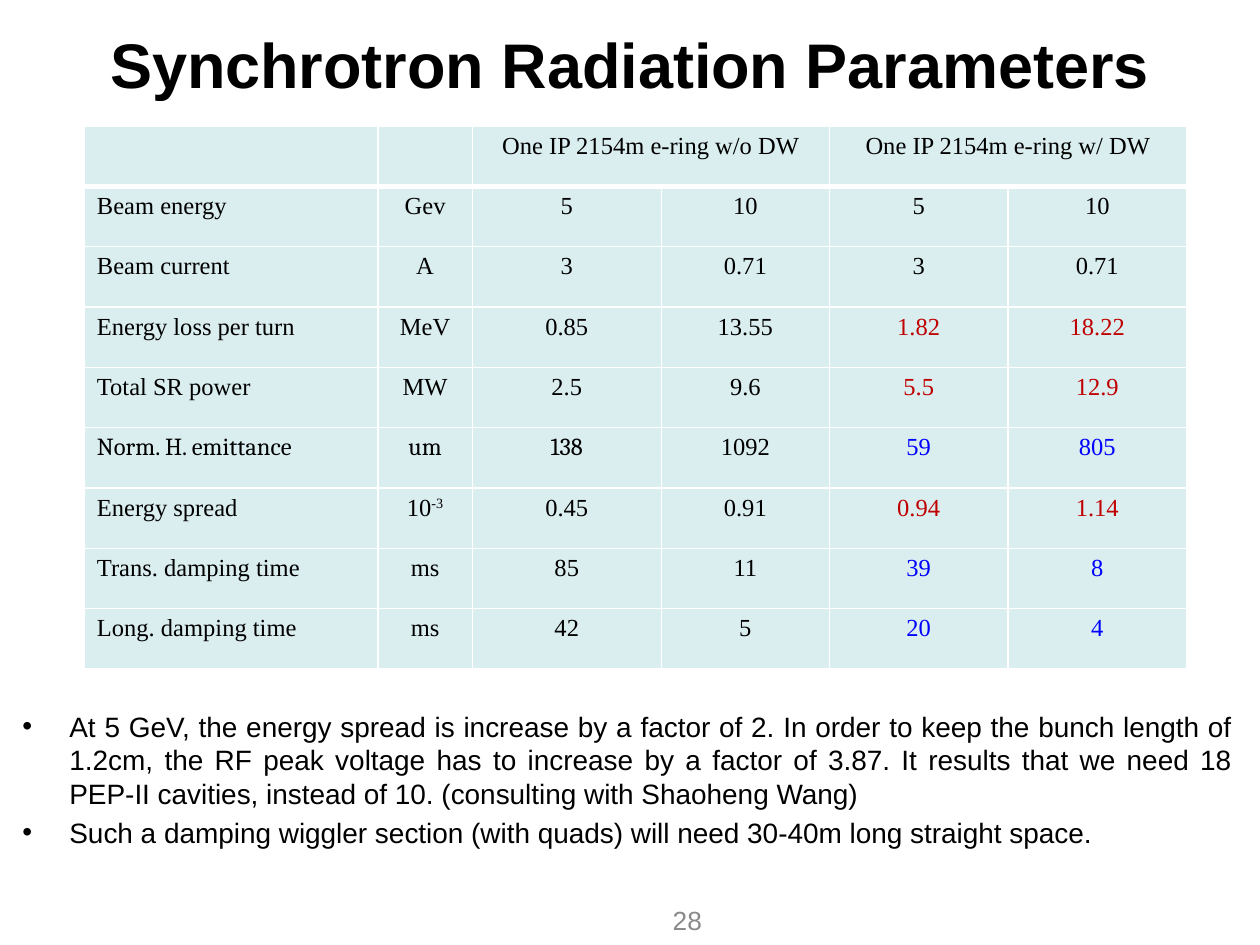
from dataclasses import dataclass

from lxml import etree
from pptx import Presentation
from pptx.dml.color import RGBColor
from pptx.enum import text
from pptx.oxml import ns
from pptx.util import Cm, Pt


@dataclass(frozen=True)
class Theme:
    black: str = "000000"
    white: str = "FFFFFF"
    cell: str = "DAEDEF"
    worse: str = "C00000"
    better: str = "0000FF"
    grey: str = "898989"
    sans: str = "Arial"
    serif: str = "Times New Roman"
    accent_serif: str = "Cambria"
    title_size: float = 36
    table_size: float = 14
    bullet_size: float = 16
    number_size: float = 15


theme = Theme()


def format_runs(paragraph, size, name, color, bold=False):
    for run in paragraph.runs:
        run.font.size = Pt(size)
        run.font.name = name
        run.font.bold = bold
        run.font.color.rgb = RGBColor.from_string(color)


def add_border(cell, side, width):
    line = etree.SubElement(cell._tc.get_or_add_tcPr(), ns.qn(f"a:ln{side}"), w=str(Pt(width)))
    fill = etree.SubElement(line, ns.qn("a:solidFill"))
    etree.SubElement(fill, ns.qn("a:srgbClr"), val=theme.white)


presentation = Presentation()
presentation.slide_width = Cm(25.4)
presentation.slide_height = Cm(19.05)
slide = presentation.slides.add_slide(presentation.slide_layouts[5])

title = slide.shapes.title
title.left, title.top, title.width, title.height = Cm(1.9), Cm(0), Cm(21.6), Cm(2.54)
title.text_frame.text = "Synchrotron Radiation Parameters"
title.text_frame.vertical_anchor = text.MSO_ANCHOR.MIDDLE
title.text_frame.paragraphs[0].alignment = text.PP_ALIGN.CENTER
format_runs(title.text_frame.paragraphs[0], theme.title_size, theme.sans, theme.black, True)

rows = [
    ["", "", "One IP 2154m e-ring w/o DW", "", "One IP 2154m e-ring w/ DW", ""],
    ["Beam energy", "Gev", "5", "10", "5", "10"],
    ["Beam current", "A", "3", "0.71", "3", "0.71"],
    ["Energy loss per turn", "MeV", "0.85", "13.55", "1.82", "18.22"],
    ["Total SR power", "MW", "2.5", "9.6", "5.5", "12.9"],
    ["Norm. H. emittance", "um", "138", "1092", "59", "805"],
    ["Energy spread", "10", "0.45", "0.91", "0.94", "1.14"],
    ["Trans. damping time", "ms", "85", "11", "39", "8"],
    ["Long. damping time", "ms", "42", "5", "20", "4"],
]
column_widths = [5.92, 1.9, 3.81, 3.39, 3.6, 3.6]
damped_colors = {3: theme.worse, 4: theme.worse, 5: theme.better,
                 6: theme.worse, 7: theme.better, 8: theme.better}
emittance_row, spread_row = 5, 6

table = slide.shapes.add_table(
    len(rows), len(column_widths), Cm(1.7), Cm(2.54), Cm(sum(column_widths)), Cm(10.95)
).table
for column, width in zip(table.columns, column_widths):
    column.width = Cm(width)
for first in (2, 4):
    table.cell(0, first).merge(table.cell(0, first + 1))

for row_index, values in enumerate(rows):
    for column_index, value in enumerate(values):
        cell = table.cell(row_index, column_index)
        for side in "LRTB":
            header_rule = (row_index, side) in ((0, "B"), (1, "T"))
            add_border(cell, side, 3 if header_rule else 1)
        cell.fill.solid()
        cell.fill.fore_color.rgb = RGBColor.from_string(theme.cell)
        if not value:
            continue
        cell.text_frame.text = value
        paragraph = cell.text_frame.paragraphs[0]
        paragraph.alignment = text.PP_ALIGN.CENTER if column_index else text.PP_ALIGN.LEFT
        if (row_index, column_index) == (spread_row, 1):
            exponent = paragraph.add_run()
            exponent.text = "-3"
            exponent._r.get_or_add_rPr().set("baseline", "30000")
        in_cambria = row_index == emittance_row and column_index < 3
        color = damped_colors.get(row_index, theme.black) if column_index >= 4 else theme.black
        format_runs(paragraph, theme.table_size,
                    theme.accent_serif if in_cambria else theme.serif, color)

remarks = [
    "At 5 GeV, the energy spread is increase by a factor of 2. In order to keep the bunch "
    "length of 1.2cm, the RF peak voltage has to increase by a factor of 3.87. It results "
    "that we need 18 PEP-II cavities, instead of 10. (consulting with Shaoheng Wang)",
    "Such a damping wiggler section (with quads) will need 30-40m long straight space.",
]
remarks_box = slide.shapes.add_textbox(Cm(0.2), Cm(14.17), Cm(24.9), Cm(3.6))
remarks_box.text_frame.word_wrap = True
remarks_box.text_frame.text = "\n".join(remarks)
for index, paragraph in enumerate(remarks_box.text_frame.paragraphs):
    properties = paragraph._p.get_or_add_pPr()
    properties.set("marL", str(Cm(0.95)))
    properties.set("indent", str(Cm(-0.95)))
    etree.SubElement(properties, ns.qn("a:buFont"), typeface=theme.sans)
    etree.SubElement(properties, ns.qn("a:buChar"), char="•")
    paragraph.alignment = text.PP_ALIGN.JUSTIFY
    paragraph.space_before = Pt(3.2 if index else 0)
    format_runs(paragraph, theme.bullet_size, theme.sans, theme.black)

number_box = slide.shapes.add_textbox(Cm(12.5), Cm(18.03), Cm(1.9), Cm(1.02))
number_box.text_frame.word_wrap = True
number_box.text_frame.vertical_anchor = text.MSO_ANCHOR.MIDDLE
number_box.text_frame.text = "28"
number_box.text_frame.paragraphs[0].alignment = text.PP_ALIGN.RIGHT
format_runs(number_box.text_frame.paragraphs[0], theme.number_size, theme.sans, theme.grey)

presentation.save("out.pptx")
